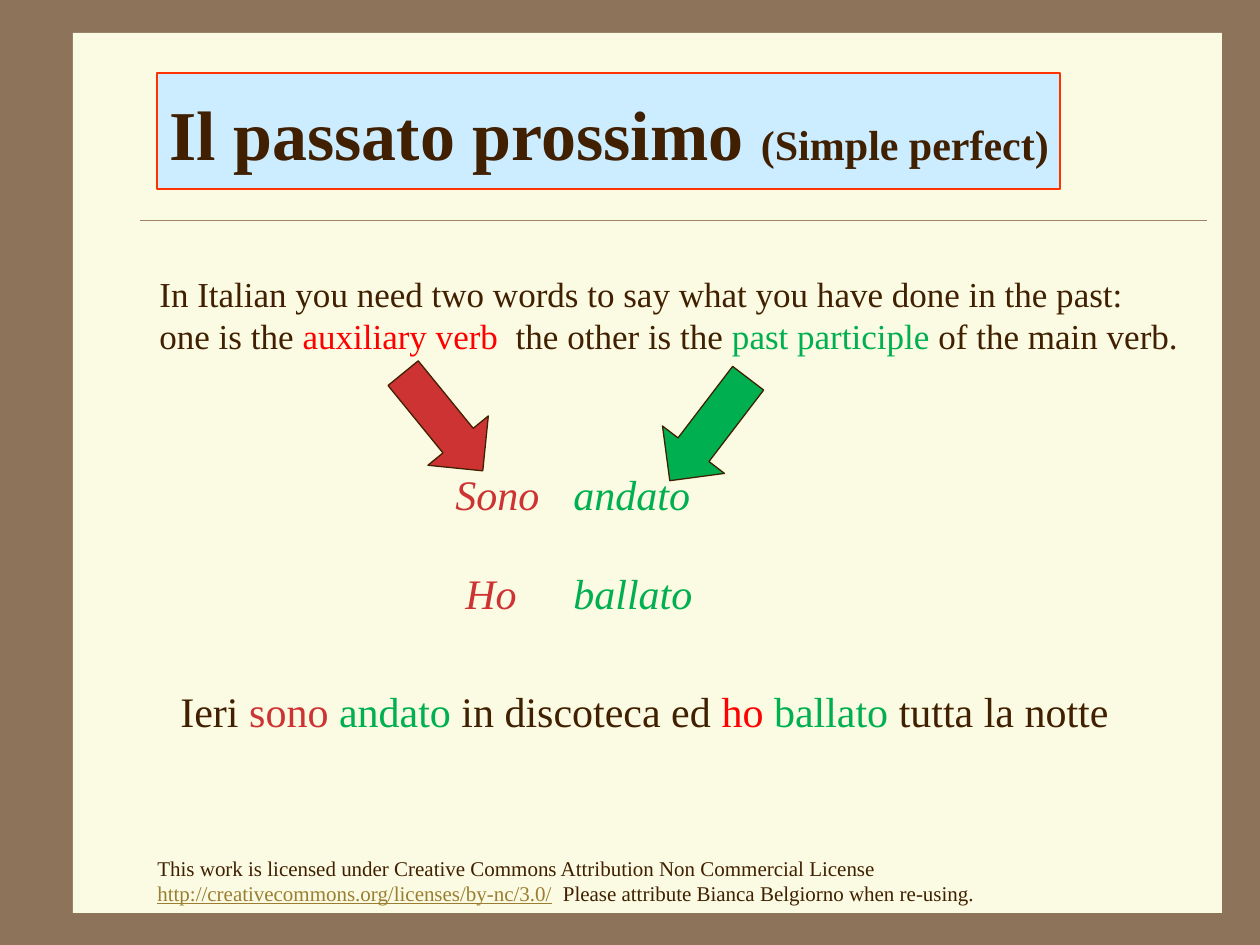
from typing import NamedTuple

import lxml.etree
import pptx
import pptx.dml.color
import pptx.enum.shapes
import pptx.enum.text
import pptx.oxml.ns
import pptx.util

RGBColor = pptx.dml.color.RGBColor
Shape = pptx.enum.shapes.MSO_SHAPE

EMU_PER_PX = 914400 / 126
FONT_NAME = "Times New Roman"

FRAME = RGBColor(0x8C, 0x73, 0x5A)
CREAM = RGBColor(0xFB, 0xFA, 0xE2)
RULE = RGBColor(0xA0, 0x83, 0x66)
PALE_BLUE = RGBColor(0xCC, 0xEC, 0xFF)
ORANGE = RGBColor(0xFF, 0x33, 0x00)
BROWN = RGBColor(0x40, 0x20, 0x00)
RED = RGBColor(0xFF, 0x00, 0x00)
BRICK = RGBColor(0xCD, 0x33, 0x33)
GREEN = RGBColor(0x00, 0xB0, 0x50)
OLIVE = RGBColor(0x9A, 0x7F, 0x32)


class Area(NamedTuple):
    left: int
    top: int
    width: int
    height: int


class Span(NamedTuple):
    text: str
    color: RGBColor = BROWN
    size: int | None = None
    underline: bool | None = None


class Line(NamedTuple):
    spans: list[Span]
    space_before: int = 0
    indent: int = 0


class TextBlock(NamedTuple):
    area: Area
    size: int
    lines: list[Line]
    wrap: bool = False
    italic: bool = False


class Block(NamedTuple):
    kind: Shape
    area: Area
    fill: RGBColor
    outline: RGBColor | None = None
    rotation: float = 0


PANEL = Block(Shape.RECTANGLE, Area(73, 33, 1149, 880), CREAM)
TITLE_PANEL = Block(Shape.RECTANGLE, Area(157, 73, 903, 116), PALE_BLUE, ORANGE)
ARROWS = [
    Block(Shape.DOWN_ARROW, Area(404, 359, 78, 126), BRICK, BROWN, 320.8),
    Block(Shape.DOWN_ARROW, Area(670, 365, 78, 129), GREEN, BROWN, 37.4),
]

TITLE = TextBlock(
    Area(157, 84, 915, 97), 40,
    [Line([Span("Il passato prossimo "), Span("(Simple perfect)", size=24)])],
)
EXPLANATION = TextBlock(
    Area(147, 266, 1064, 97), 20,
    [
        Line([Span("In Italian you need two words to say what you have done in the past:")]),
        Line([
            Span("one is the "), Span("auxiliary verb ", RED),
            Span(" the other is the "), Span("past participle ", GREEN),
            Span("of the main verb."),
        ]),
    ],
    wrap=True,
)
AUXILIARIES = TextBlock(
    Area(443, 462, 122, 165), 24,
    [Line([Span("Sono", BRICK)]), Line([Span("Ho", BRICK)], 28, 10)],
    italic=True,
)
PARTICIPLES = TextBlock(
    Area(561, 462, 156, 165), 24,
    [Line([Span("andato", GREEN)]), Line([Span("ballato", GREEN)], 28)],
    italic=True,
)
EXAMPLE = TextBlock(
    Area(168, 679, 961, 64), 24,
    [Line([
        Span("Ieri "), Span("sono ", BRICK), Span("andato", GREEN),
        Span(" in discoteca ed "), Span("ho ", RED), Span("ballato", GREEN),
        Span(" tutta la notte"),
    ])],
)
LICENCE = TextBlock(
    Area(145, 849, 924, 63), 12,
    [Line([
        Span("This work is licensed under Creative Commons Attribution Non Commercial License "),
        Span("http://creativecommons.org/licenses/by-nc/3.0/", OLIVE, underline=True),
        Span("  Please attribute Bianca Belgiorno when re-using."),
    ])],
    wrap=True,
)


def px(length: int) -> pptx.util.Emu:
    return pptx.util.Emu(round(length * EMU_PER_PX))


def draw_block(slide, block: Block) -> None:
    shape = slide.shapes.add_shape(block.kind, *map(px, block.area))
    shape.shadow.inherit = False
    shape.rotation = block.rotation
    shape.fill.solid()
    shape.fill.fore_color.rgb = block.fill
    if block.outline is None:
        shape.line.fill.background()
    else:
        shape.line.color.rgb = block.outline
        shape.line.width = pptx.util.Pt(0.75)


def draw_rule(slide, left: int, right: int, y: int) -> None:
    rule = slide.shapes.add_connector(
        pptx.enum.shapes.MSO_CONNECTOR.STRAIGHT, px(left), px(y), px(right), px(y)
    )
    rule.line.color.rgb = RULE
    rule.line.width = pptx.util.Pt(0.25)
    lxml.etree.SubElement(rule._element.spPr, pptx.oxml.ns.qn("a:effectLst"))


def write_text(box, block: TextBlock, bold: bool = False) -> None:
    """Place a text box or placeholder and fill it with the block's lines."""
    box.left, box.top, box.width, box.height = map(px, block.area)
    frame = box.text_frame
    frame.word_wrap = block.wrap
    frame.auto_size = pptx.enum.text.MSO_AUTO_SIZE.SHAPE_TO_FIT_TEXT
    frame.vertical_anchor = pptx.enum.text.MSO_ANCHOR.TOP
    for index, line in enumerate(block.lines):
        para = frame.add_paragraph() if index else frame.paragraphs[0]
        para.alignment = pptx.enum.text.PP_ALIGN.LEFT
        if line.space_before:
            para.space_before = pptx.util.Pt(line.space_before)
        if line.indent:
            para._p.get_or_add_pPr().set("marL", str(px(line.indent)))
        para.font.name = FONT_NAME
        para.font.size = pptx.util.Pt(block.size)
        para.font.bold = bold
        para.font.italic = block.italic
        for span in line.spans:
            run = para.add_run()
            run.text = span.text
            run.font.color.rgb = span.color
            run.font.underline = span.underline
            if span.size:
                run.font.size = pptx.util.Pt(span.size)


def add_text(slide, block: TextBlock) -> None:
    write_text(slide.shapes.add_textbox(*map(px, block.area)), block)


def main() -> None:
    deck = pptx.Presentation()
    deck.slide_width, deck.slide_height = px(1260), px(945)
    slide = deck.slides.add_slide(deck.slide_layouts.get_by_name("Title Only"))
    slide.background.fill.solid()
    slide.background.fill.fore_color.rgb = FRAME

    draw_block(slide, PANEL)
    draw_rule(slide, 140, 1207, 220)
    draw_block(slide, TITLE_PANEL)

    title = slide.shapes.title
    write_text(title, TITLE, bold=True)
    slide.shapes._spTree.append(title._element)  # in front of its panel

    for block in (EXPLANATION, AUXILIARIES, PARTICIPLES):
        add_text(slide, block)
    for arrow in ARROWS:
        draw_block(slide, arrow)
    for block in (EXAMPLE, LICENCE):
        add_text(slide, block)

    deck.save("out.pptx")


if __name__ == "__main__":
    main()
